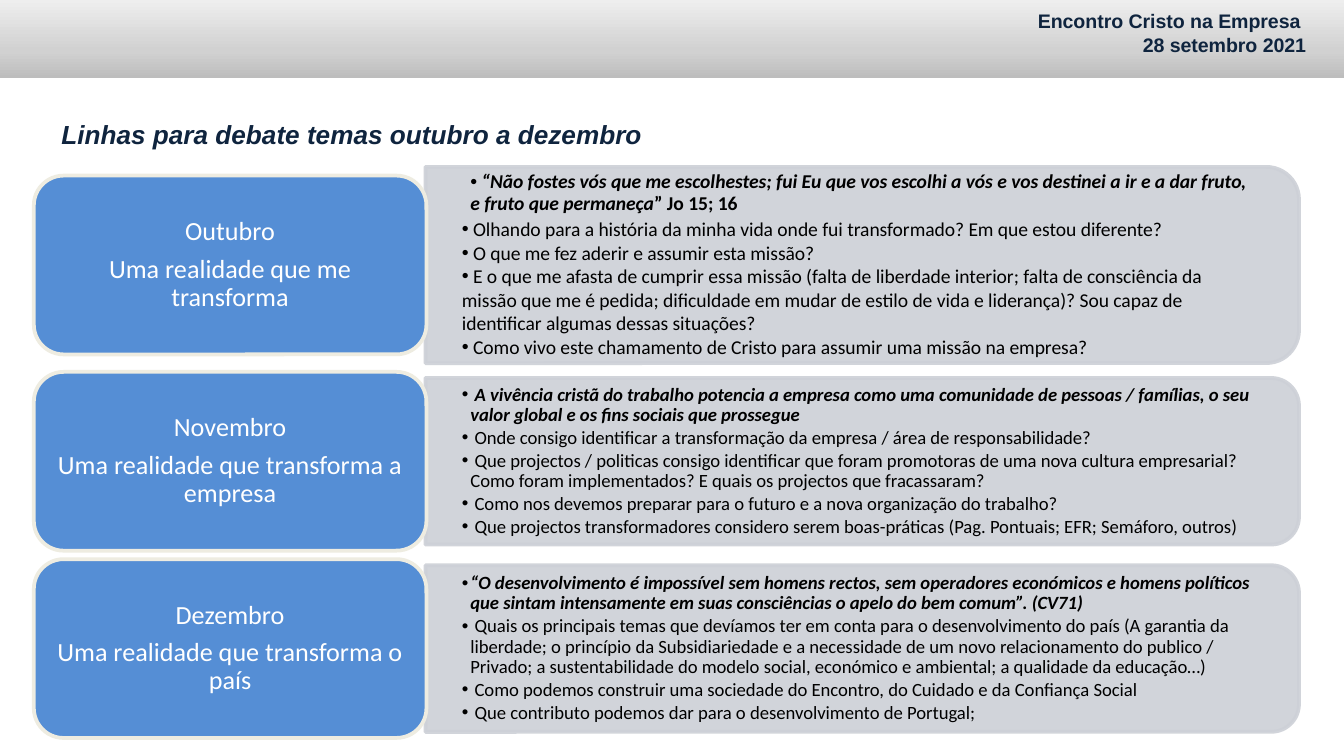
import copy

import pptx
import pptx.dml.color
import pptx.enum.shapes
import pptx.enum.text
import pptx.oxml
import pptx.oxml.ns
import pptx.util

Cm = pptx.util.Cm
Pt = pptx.util.Pt
RGBColor = pptx.dml.color.RGBColor
Shape = pptx.enum.shapes.MSO_SHAPE
Align = pptx.enum.text.PP_ALIGN
Anchor = pptx.enum.text.MSO_ANCHOR
qn = pptx.oxml.ns.qn

NAVY = RGBColor(0x0F, 0x24, 0x3E)
BLUE = RGBColor(0x55, 0x8E, 0xD5)
CREAM = RGBColor(0xEE, 0xEC, 0xE1)
PANEL_GREY = RGBColor(0xCD, 0xD0, 0xD7)
BLACK = RGBColor(0, 0, 0)
WHITE = RGBColor(0xFF, 0xFF, 0xFF)
BAND_STOPS = [(0, RGBColor(0xBD, 0xBD, 0xBD)),
              (35, RGBColor(0xD1, 0xD1, 0xD1)),
              (100, RGBColor(0xEE, 0xEE, 0xEE))]

PLAIN = {"bold": False, "italic": False}
QUOTE = {"bold": True, "italic": True}
STRONG = {"bold": True, "italic": False}

LABEL_LEFT, LABEL_WIDTH, LABEL_HEIGHT = 0.64, 7.42, 3.38
PANEL_LEFT, PANEL_WIDTH = 8.04, 16.51
LIST_WIDTH = 16.34
HANGING = {"margin": 0.16, "indent": -0.16, "line_spacing": 0.9, "space_after": Pt(1.5)}
FIRST_LINE = {"margin": 0.16, "indent": 0, "line_spacing": 0.9, "space_after": Pt(1.5)}
FLUSH = {"margin": 0, "indent": 0, "line_spacing": 1.0, "space_after": Pt(0)}


def plain_points(texts, layout):
    return [([(text, PLAIN)], layout) for text in texts]


# Each month: label lines, label top, panel height, text size, list placeholder, points
MONTHS = [
    (["Outubro", "Uma realidade que me transforma"], 3.32, 3.71, 10.5, 1,
     [([(" “Não fostes vós que me escolhestes; fui Eu que vos escolhi a vós e vos destinei "
         "a ir e a dar fruto, e fruto que permaneça", QUOTE), ("” Jo 15; 16", STRONG)],
       FIRST_LINE)]
     + plain_points([
         " Olhando para a história da minha vida onde fui transformado? Em que estou diferente?",
         " O que me fez aderir e assumir esta missão?",
         " E o que me afasta de cumprir essa missão (falta de liberdade interior; falta de "
         "consciência da missão que me é pedida; dificuldade em mudar de estilo de vida e "
         "liderança)? Sou capaz de identificar algumas dessas situações?",
         " Como vivo este chamamento de Cristo para assumir uma missão na empresa?"], FLUSH)),
    (["Novembro", "Uma realidade que transforma a empresa"], 7.03, 3.15, 10, 2,
     [([(" A vivência cristã do trabalho potencia a empresa como uma comunidade de pessoas / "
         "famílias, o seu valor global e os fins sociais que prossegue", QUOTE)], HANGING)]
     + plain_points([
         " Onde consigo identificar a transformação da empresa / área de responsabilidade?",
         " Que projectos / politicas consigo identificar que foram promotoras de uma nova "
         "cultura empresarial? Como foram implementados? E quais os projectos que fracassaram?",
         " Como nos devemos preparar para o futuro e a nova organização do trabalho?",
         " Que projectos transformadores considero serem boas-práticas (Pag. Pontuais; EFR; "
         "Semáforo, outros)"], HANGING)),
    (["Dezembro", "Uma realidade que transforma o país"], 10.57, 3.15, 10, 4,
     [([("“O desenvolvimento é impossível sem homens rectos, sem operadores económicos e homens "
         "políticos que sintam intensamente em suas consciências o apelo do bem comum”. (CV71)",
         QUOTE)], HANGING)]
     + plain_points([
         " Quais os principais temas que devíamos ter em conta para o desenvolvimento do país "
         "(A garantia da liberdade; o princípio da Subsidiariedade e a necessidade de um novo "
         "relacionamento do publico / Privado; a sustentabilidade do modelo social, económico "
         "e ambiental; a qualidade da educação…)",
         " Como podemos construir uma sociedade do Encontro, do Cuidado e da Confiança Social",
         " Que contributo podemos dar para o desenvolvimento de Portugal;"], HANGING)),
]


def set_all(target, values):
    for name, value in values.items():
        setattr(target, name, value)


class SlideBuilder:
    def __init__(self, slide):
        self.slide = slide
        self.shapes = slide.shapes
        self.heading_font = {"name": "Arial", "bold": True}
        self.body_font = {"name": "Calibri"}

    def place(self, shape, left, top, width, height):
        set_all(shape, {"left": Cm(left), "top": Cm(top),
                        "width": Cm(width), "height": Cm(height)})

    def frame(self, shape, anchor, side=0.25, edge=0.13):
        set_all(shape.text_frame, {
            "word_wrap": True, "auto_size": pptx.enum.text.MSO_AUTO_SIZE.NONE,
            "vertical_anchor": anchor, "margin_left": Cm(side), "margin_right": Cm(side),
            "margin_top": Cm(edge), "margin_bottom": Cm(edge)})
        return shape.text_frame

    def paragraph(self, frame, number, runs, layout, font):
        """Fill paragraph `number` of the frame with (text, emphasis) runs."""
        paragraph = frame.paragraphs[0] if number == 0 else frame.add_paragraph()
        set_all(paragraph, layout)
        for text, emphasis in runs:
            run = paragraph.add_run()
            run.text = text
            color = font["color"]
            set_all(run.font, {**{k: v for k, v in font.items() if k != "color"}, **emphasis})
            run.font.color.rgb = color
        return paragraph

    def shape(self, preset, left, top, width, height):
        shape = self.shapes.add_shape(preset, Cm(left), Cm(top), Cm(width), Cm(height))
        shape.shadow.inherit = False
        return shape

    def paint(self, shape, fill, line):
        shape.fill.solid()
        shape.fill.fore_color.rgb = fill
        shape.line.color.rgb = line
        shape.line.width = Pt(2)

    def band(self, left, top, width, height):
        band = self.shape(Shape.RECTANGLE, left, top, width, height)
        band.line.fill.background()
        band.fill.gradient()
        band.fill.gradient_angle = 90
        stop_list = band._element.spPr.find(qn("a:gradFill")).find(qn("a:gsLst"))
        stop_list.append(copy.deepcopy(stop_list[-1]))
        for stop, (percent, color) in zip(band.fill.gradient_stops, BAND_STOPS):
            stop.position = percent / 100
            stop.color.rgb = color

    def header(self, lines, left, top, width, height):
        box = self.shapes.add_textbox(Cm(left), Cm(top), Cm(width), Cm(height))
        frame = self.frame(box, Anchor.BOTTOM)
        font = {**self.heading_font, "size": Pt(10.5), "color": NAVY}
        for number, line in enumerate(lines):
            layout = {"alignment": Align.RIGHT, "line_spacing": 0.8,
                      "space_before": Pt(3 if number else 0)}
            self.paragraph(frame, number, [(line, {})], layout, font)

    def title(self, text, left, top, width, height):
        title = self.shapes.title
        self.place(title, left, top, width, height)
        font = {**self.heading_font, "size": Pt(14), "color": NAVY}
        self.paragraph(self.frame(title, Anchor.TOP), 0, [(text, {"italic": True})],
                       {"alignment": Align.LEFT}, font)

    def label(self, lines, top):
        label = self.shape(Shape.ROUNDED_RECTANGLE, LABEL_LEFT, top, LABEL_WIDTH, LABEL_HEIGHT)
        self.paint(label, BLUE, CREAM)
        frame = self.frame(label, Anchor.MIDDLE, 0.15, 0.08)
        font = {**self.body_font, "size": Pt(14), "color": WHITE}
        layout = {"alignment": Align.CENTER, "line_spacing": 0.9, "space_after": Pt(5)}
        for number, line in enumerate(lines):
            self.paragraph(frame, number, [(line, {})], layout, font)

    def panel(self, middle, height):
        """Turn a shape with two rounded top corners so that they face right."""
        center = PANEL_LEFT + PANEL_WIDTH / 2
        panel = self.shape(Shape.ROUND_2_SAME_RECTANGLE, center - height / 2,
                           middle - PANEL_WIDTH / 2, height, PANEL_WIDTH)
        panel.rotation = 90
        self.paint(panel, PANEL_GREY, PANEL_GREY)
        for color in panel._element.spPr.iter(qn("a:srgbClr")):
            pptx.oxml.ns  # namespaces come from the qualified name below
            color.append(color.makeelement(qn("a:alpha"), {"val": "90000"}))

    def bullet_list(self, index, points, size, middle, height):
        body = next(p for p in self.slide.placeholders if p.placeholder_format.idx == index)
        self.place(body, PANEL_LEFT, middle - height / 2, LIST_WIDTH, height)
        self.shapes._spTree.append(body._element)  # bring in front of the panel
        frame = self.frame(body, Anchor.MIDDLE, 0.69, 0)
        font = {**self.body_font, "size": Pt(size), "color": BLACK}
        for number, (runs, layout) in enumerate(points):
            spacing = {k: layout[k] for k in ("line_spacing", "space_after")}
            paragraph = self.paragraph(frame, number, runs,
                                       {**spacing, "space_before": Pt(0)}, font)
            properties = paragraph._p.get_or_add_pPr()
            properties.set("marL", str(Cm(layout["margin"])))
            properties.set("indent", str(Cm(layout["indent"])))
            properties.append(properties.makeelement(qn("a:buChar"), {"char": "•"}))

    def remove_empty_placeholders(self):
        for placeholder in list(self.slide.placeholders):
            if not placeholder.text_frame.text:
                placeholder._element.getparent().remove(placeholder._element)


def main():
    presentation = pptx.Presentation()
    presentation.slide_width, presentation.slide_height = Cm(25.4), Cm(14.29)
    comparison_layout = presentation.slide_layouts[4]
    builder = SlideBuilder(presentation.slides.add_slide(comparison_layout))
    builder.band(0, 0, 25.4, 1.48)
    builder.header(["Encontro Cristo na Empresa ", "28 setembro 2021"], 12.7, 0, 12.24, 1.2)
    builder.title("Linhas para debate temas outubro a dezembro", 0.91, 2.1, 16, 1)
    for lines, top, panel_height, size, index, points in MONTHS:
        middle = top + LABEL_HEIGHT / 2
        builder.panel(middle, panel_height)
        builder.bullet_list(index, points, size, middle, panel_height)
        builder.label(lines, top)
    builder.remove_empty_placeholders()
    presentation.save("out.pptx")


if __name__ == "__main__":
    main()
